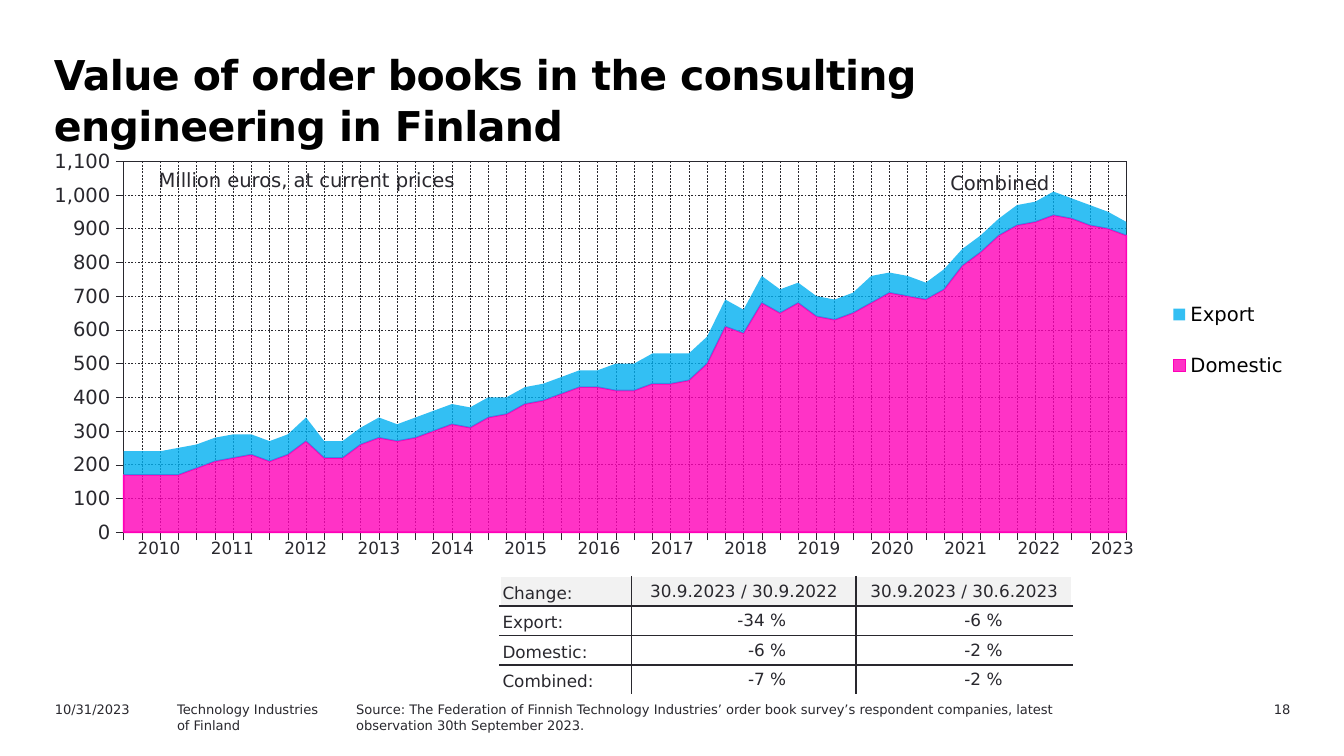
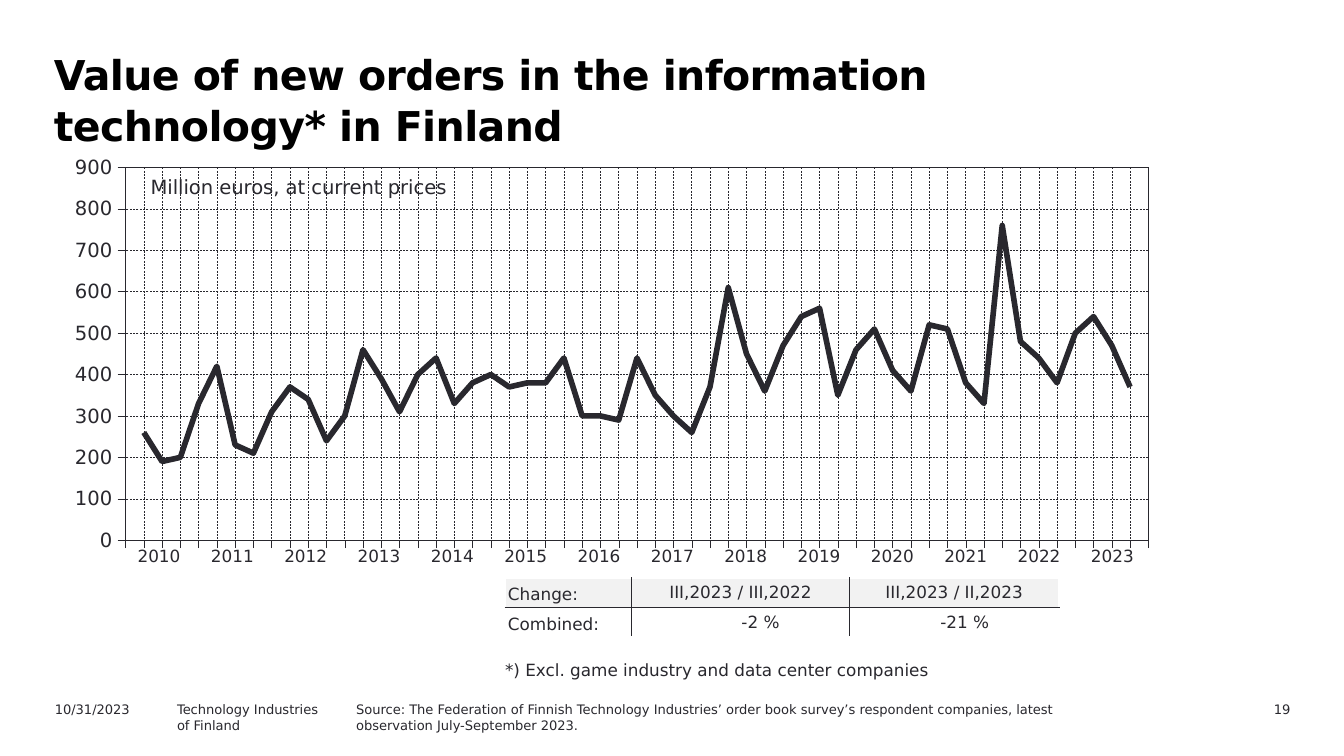
from collections import namedtuple
from dataclasses import dataclass

from lxml import etree
from pptx import Presentation
from pptx import util as u
from pptx.chart import data as chart_data
from pptx.dml.color import RGBColor
from pptx.enum import chart as charts, dml, text
from pptx.oxml.ns import qn

Pt = u.Pt
ALIGN, ANCHOR = text.PP_ALIGN, text.MSO_ANCHOR
NO_STYLE_NO_GRID = "{2D5ABB26-0587-4C30-8999-92F81FD0307C}"


@dataclass(frozen=True)
class Theme:
    font: str = "DejaVu Sans"
    ink: str = "29282E"
    black: str = "000000"
    white: str = "FFFFFF"
    header: str = "F2F2F2"
    domestic: str = "FF00B8"
    export: str = "00B0F0"
    title_size: float = 22
    label_size: float = 10.5
    table_size: float = 9
    footer_size: float = 7


THEME = Theme()


class Box(namedtuple("Box", "left top width height")):
    def inner(self, left, top, width, height):
        """Box given relative to this one's top left corner."""
        return Box(self.left + left, self.top + top, width, height)

    def lengths(self):
        return [Pt(value) for value in self]


TITLE = Box(20.2, 22.3, 629.3, 51.1)
FOOTER = Box(22.3, 372.2, 676.1, 28.8)

DOMESTIC = [
    170, 170, 170, 170, 190, 210, 220, 230, 210, 230, 270, 220, 220, 260,
    280, 270, 280, 300, 320, 310, 340, 350, 380, 390, 410, 430, 430, 420,
    420, 440, 440, 450, 500, 610, 590, 680, 650, 680, 640, 630, 650, 680,
    710, 700, 690, 720, 790, 830, 880, 910, 920, 940, 930, 910, 900, 880]
EXPORT = [
    70, 70, 70, 80, 70, 70, 70, 60, 60, 60, 70, 50, 50, 50,
    60, 50, 60, 60, 60, 60, 60, 50, 50, 50, 50, 50, 50, 80,
    80, 90, 90, 80, 80, 80, 70, 80, 70, 60, 60, 60, 60, 80,
    60, 60, 50, 60, 50, 50, 50, 60, 60, 70, 60, 60, 50, 40]
NEW_ORDERS = [
    None, 260, 190, 200, 330, 420, 230, 210, 310, 370, 340, 240, 300, 460,
    390, 310, 400, 440, 330, 380, 400, 370, 380, 380, 440, 300, 300, 290,
    440, 350, 300, 260, 370, 610, 450, 360, 470, 540, 560, 350, 460, 510,
    410, 360, 520, 510, 380, 330, 760, 480, 440, 380, 500, 540, 470, 370, None]


def color(value):
    return RGBColor.from_string(value)


def style_font(font, size, ink=THEME.ink, bold=False):
    font.name, font.size, font.bold = THEME.font, Pt(size), bold
    font.color.rgb = color(ink)


def style_line(line, width, dashed=False):
    line.color.rgb = color(THEME.ink)
    line.width = Pt(width)
    if dashed:
        line.dash_style = dml.MSO_LINE.DASH


def style_text(frame, size, align=ALIGN.LEFT, ink=THEME.ink, bold=False):
    for paragraph in frame.paragraphs:
        paragraph.alignment = align
        for run in paragraph.runs:
            style_font(run.font, size, ink, bold)


def place(shape, box):
    shape.left, shape.top, shape.width, shape.height = box.lengths()


def add_label(slide, box, words, size, align=ALIGN.LEFT, margin=7.2):
    frame = slide.shapes.add_textbox(*box.lengths()).text_frame
    frame.word_wrap = True
    frame.margin_left = frame.margin_right = Pt(margin)
    frame.text = words
    style_text(frame, size, align)


def add_title(slide, box, words):
    title = slide.shapes.title
    place(title, box)
    frame = title.text_frame
    frame.text = words
    frame.vertical_anchor = ANCHOR.TOP
    frame.auto_size = text.MSO_AUTO_SIZE.NONE
    style_text(frame, THEME.title_size, ink=THEME.black, bold=True)
    paragraph = frame.paragraphs[0]
    paragraph.line_spacing = Pt(27)
    paragraph._p.get_or_add_pPr().set("marL", str(Pt(1.44)))
    paragraph.runs[0]._r.get_or_add_rPr().set("spc", "-30")


def add_footer(slide, box, source, number):
    size = THEME.footer_size
    add_label(slide, box.inner(0, 0, 72, 13), "10/31/2023", size)
    add_label(slide, box.inner(65.5, 0, 129.6, 13),
              "Technology Industries\nof Finland", size)
    add_label(slide, box.inner(608.4, 0, 67.7, 13), str(number), size, ALIGN.RIGHT)

    body = slide.placeholders[1]
    place(body, box.inner(161.3, 0, 391.7, box.height))
    body.text_frame.text = source
    body.text_frame.auto_size = text.MSO_AUTO_SIZE.NONE
    paragraph = body.text_frame.paragraphs[0]
    properties = paragraph._p.get_or_add_pPr()
    properties.set("marL", "0")
    properties.set("indent", "0")
    etree.SubElement(properties, qn("a:buNone"))
    paragraph.space_before = Pt(0)
    style_text(body.text_frame, size)


def set_layout(parent, position, fractions, inner=False):
    """Fix a chart part at x, y, w, h, as fractions of the chart."""
    for layout in parent.findall(qn("c:layout")):
        parent.remove(layout)
    layout = etree.Element(qn("c:layout"))
    manual = etree.SubElement(layout, qn("c:manualLayout"))
    settings = [("layoutTarget", "inner")] if inner else []
    settings += [("xMode", "edge"), ("yMode", "edge")]
    settings += zip("xywh", map(str, fractions))
    for name, value in settings:
        etree.SubElement(manual, qn("c:" + name)).set("val", value)
    parent.insert(position, layout)


def frame_plot(plot_area):
    properties = etree.SubElement(plot_area, qn("c:spPr"))
    etree.SubElement(properties, qn("a:noFill"))
    line = etree.SubElement(properties, qn("a:ln"), w=str(Pt(0.75)))
    fill = etree.SubElement(line, qn("a:solidFill"))
    etree.SubElement(fill, qn("a:srgbClr"), val=THEME.ink)


def add_order_chart(slide, box, kind, series, maximum, plot):
    values = chart_data.CategoryChartData(number_format="#,##0")
    points = len(next(iter(series.values())))
    values.categories = [str(point + 1) for point in range(points)]
    for name, numbers in series.items():
        values.add_series(name, numbers)
    chart = slide.shapes.add_chart(kind, *box.lengths(), values).chart
    chart.has_title = chart.has_legend = False
    style_font(chart.font, THEME.label_size)
    chart.plots[0].vary_by_categories = False

    for axis in (chart.category_axis, chart.value_axis):
        axis.has_major_gridlines = True
        axis.major_tick_mark = charts.XL_TICK_MARK.OUTSIDE
        axis.minor_tick_mark = charts.XL_TICK_MARK.NONE
        style_line(axis.format.line, 0.22)
        style_line(axis.major_gridlines.format.line, 0.25, dashed=True)
        style_font(axis.tick_labels.font, THEME.label_size)
    chart.category_axis.tick_label_position = charts.XL_TICK_LABEL_POSITION.NONE
    value_axis = chart.value_axis
    value_axis.minimum_scale, value_axis.maximum_scale = 0, maximum
    value_axis.major_unit = 100
    value_axis.tick_labels.number_format = "#,##0"
    value_axis.tick_labels.number_format_is_linked = False

    element = value_axis._element
    for old in element.findall(qn("c:crossBetween")):
        element.remove(old)
    crossing = etree.Element(qn("c:crossBetween"), val="midCat")
    element.find(qn("c:crosses")).addnext(crossing)

    plot_area = chart._chartSpace.find(".//" + qn("c:plotArea"))
    set_layout(plot_area, 0, plot, inner=True)
    frame_plot(plot_area)
    return chart


def style_areas(chart):
    for series, fill in zip(chart.plots[0].series, (THEME.domestic, THEME.export)):
        series.format.fill.solid()
        series.format.fill.fore_color.rgb = color(fill)
        tint = series._element.find(".//" + qn("a:srgbClr"))
        etree.SubElement(tint, qn("a:alpha"), val="80000")
    outline = chart.plots[0].series[0].format.line
    outline.color.rgb = color(THEME.domestic)
    outline.width = Pt(0.88)
    chart.has_legend = True
    chart.legend.position = charts.XL_LEGEND_POSITION.RIGHT
    chart.legend.include_in_layout = False
    style_font(chart.legend.font, THEME.label_size, THEME.black)
    set_layout(chart.legend._element, 1, (0.89, 0.3, 0.1, 0.31))


def style_curve(chart):
    series = chart.plots[0].series[0]
    series.smooth = False
    series.marker.style = charts.XL_MARKER_STYLE.NONE
    style_line(series.format.line, 3)


def add_plain_table(slide, box, rows, columns):
    table = slide.shapes.add_table(rows, columns, *box.lengths()).table
    table.first_row = table.horz_banding = False
    table._tbl.tblPr.find(qn("a:tableStyleId")).text = NO_STYLE_NO_GRID
    for row in table.rows:
        row.height = Pt(box.height / rows)
    for column in table.columns:
        column.width = Pt(box.width / columns)
    return table


def add_years(slide, box):
    table = add_plain_table(slide, box, 1, 14)
    for cell, year in zip(table.rows[0].cells, range(2010, 2024)):
        cell.text = str(year)
        cell.fill.background()
        style_text(cell.text_frame, THEME.table_size, ALIGN.CENTER)


def set_border(cell, side, ink):
    line = etree.SubElement(cell._tc.get_or_add_tcPr(), qn("a:ln" + side), w=str(Pt(1)))
    fill = etree.SubElement(line, qn("a:solidFill"))
    etree.SubElement(fill, qn("a:srgbClr"), val=ink)


def add_changes(slide, left, top, widths, rows):
    """Table of changes: dark lines between cells, white ones around."""
    box = Box(left, top, sum(widths), 15.84 * len(rows))
    table = add_plain_table(slide, box, len(rows), len(widths))
    for column, width in zip(table.columns, widths):
        column.width = Pt(width)
    for r, row in enumerate(rows):
        for c, words in enumerate(row):
            cell = table.cell(r, c)
            inside = {"L": c > 0, "R": c < len(row) - 1,
                      "T": r > 0, "B": r < len(rows) - 1}
            for side, dark in inside.items():
                set_border(cell, side, THEME.ink if dark else THEME.white)
            cell.fill.solid()
            cell.fill.fore_color.rgb = color(THEME.white if r else THEME.header)
            cell.text = words
            cell.margin_left = cell.margin_top = cell.margin_bottom = Pt(1.44)
            cell.margin_right = Pt(37.44 if r and c else 1.44)
            cell.vertical_anchor = ANCHOR.MIDDLE if c else ANCHOR.BOTTOM
            align = (ALIGN.RIGHT if r else ALIGN.CENTER) if c else ALIGN.LEFT
            style_text(cell.text_frame, THEME.table_size, align)


def add_chart_slide(presentation, title, number, period):
    slide = presentation.slides.add_slide(presentation.slide_layouts[1])
    add_title(slide, TITLE, title)
    add_footer(slide, FOOTER, "Source: The Federation of Finnish Technology Industries’ "
               "order book survey’s respondent companies, latest observation "
               + period, number)
    return slide


def add_chart_labels(slide, box, unit_at, years_at):
    add_label(slide, box.inner(*unit_at, 175.7, 19.4),
              "Million euros, at current prices", THEME.label_size, margin=6.5)
    add_years(slide, box.inner(*years_at, 550.1, 22.3))


def add_order_books(presentation):
    slide = add_chart_slide(
        presentation, "Value of order books in the consulting engineering in Finland",
        18, "30th September 2023.")
    box = Box(25.2, 79.9, 673.2, 224.6)
    style_areas(add_order_chart(
        slide, box, charts.XL_CHART_TYPE.AREA_STACKED,
        {"Domestic": DOMESTIC, "Export": EXPORT}, 1100, (0.061, 0.029, 0.798, 0.885)))
    add_chart_labels(slide, box, (53.3, 6.5), (40.3, 205.2))
    add_label(slide, box.inner(477.4, 7.9, 76.3, 19.4), "Combined",
              THEME.label_size, margin=6.5)
    add_changes(slide, 267.8, 308.9, (70.6, 120.2, 115.9), [
        ("Change:", "30.9.2023 / 30.9.2022", "30.9.2023 / 30.6.2023"),
        ("Export:", "-34 %", "-6 %"),
        ("Domestic:", "-6 %", "-2 %"),
        ("Combined:", "-7 %", "-2 %")])


def add_new_orders(presentation):
    slide = add_chart_slide(
        presentation, "Value of new orders in the information technology* in Finland",
        19, "July-September 2023.")
    box = Box(22.3, 79.9, 661, 239.8)
    style_curve(add_order_chart(
        slide, box, charts.XL_CHART_TYPE.LINE,
        {"Series 1": NEW_ORDERS}, 900, (0.068, 0.041, 0.829, 0.833)))
    add_chart_labels(slide, box, (51.9, 10.1), (43.2, 209.5))
    add_changes(slide, 270.7, 309.6, (67.7, 116.6, 112.3), [
        ("Change:", "III,2023 / III,2022", "III,2023 / II,2023"),
        ("Combined:", "-2 %", "-21 %")])
    add_label(slide, Box(263.5, 349.9, 268.6, 18),
              "*) Excl. game industry and data center companies", THEME.table_size)


def main():
    presentation = Presentation()
    presentation.slide_width, presentation.slide_height = Pt(720), Pt(405)
    add_order_books(presentation)
    add_new_orders(presentation)
    presentation.save("out.pptx")


if __name__ == "__main__":
    main()
